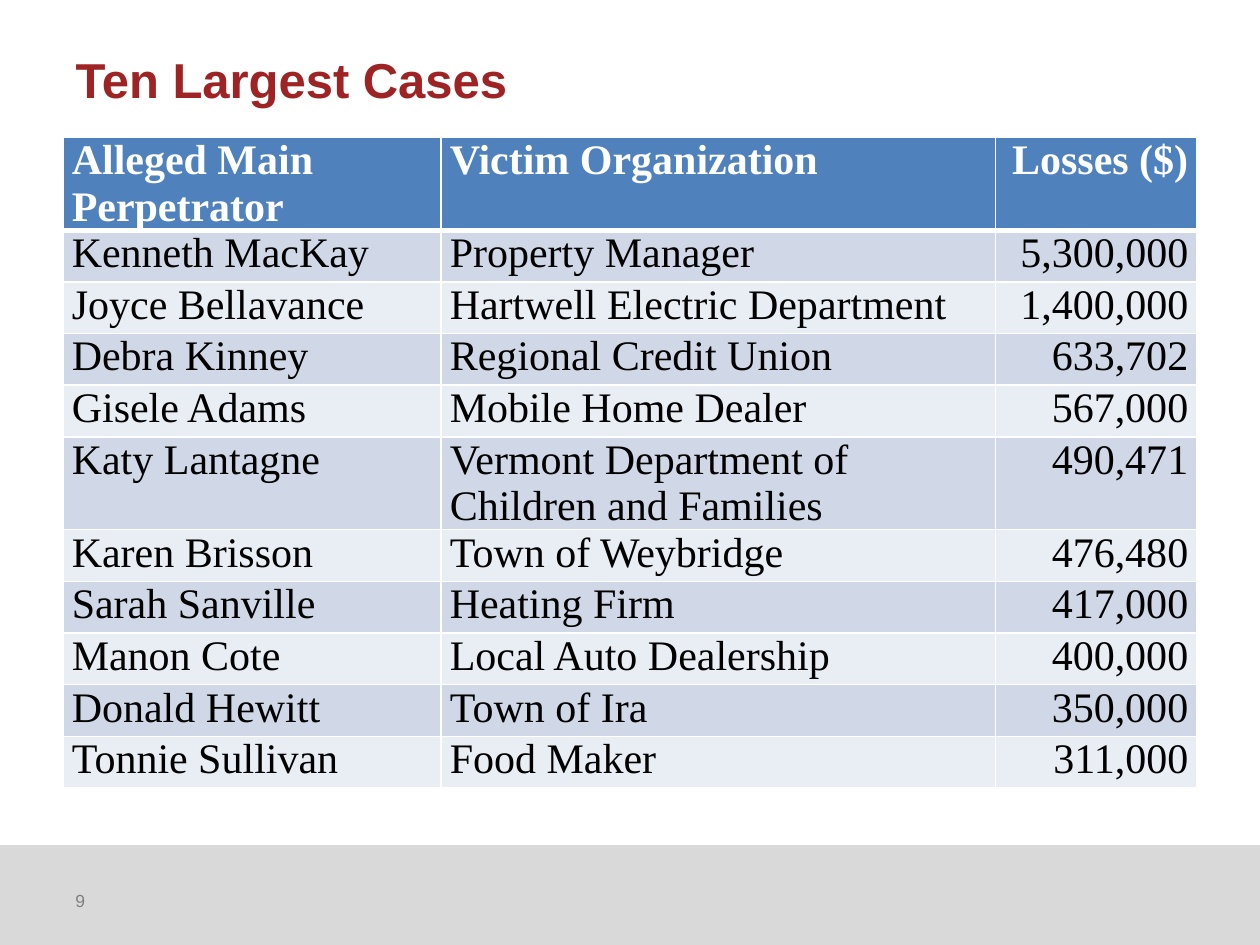
import pptx
import pptx.util
import pptx.dml.color
import pptx.enum.shapes
import pptx.enum.text
import pptx.oxml
import pptx.oxml.ns

Inches, Pt = pptx.util.Inches, pptx.util.Pt
ALIGN, ANCHOR = pptx.enum.text.PP_ALIGN, pptx.enum.text.MSO_ANCHOR

TITLE = "Ten Largest Cases"
PAGE = "9"
HEAD = ("Alleged Main Perpetrator", "Victim Organization", "Losses ($)")
CASES = [
    ("Kenneth MacKay", "Property Manager", "5,300,000"),
    ("Joyce Bellavance", "Hartwell Electric Department", "1,400,000"),
    ("Debra Kinney", "Regional Credit Union", "633,702"),
    ("Gisele Adams", "Mobile Home Dealer", "567,000"),
    ("Katy Lantagne", "Vermont Department of Children and Families", "490,471"),
    ("Karen Brisson", "Town of Weybridge", "476,480"),
    ("Sarah Sanville", "Heating Firm", "417,000"),
    ("Manon Cote", "Local Auto Dealership", "400,000"),
    ("Donald Hewitt", "Town of Ira", "350,000"),
    ("Tonnie Sullivan", "Food Maker", "311,000"),
]
COLORS = {
    "title": "9E2324", "head": "4F81BD", "odd": "D0D8E8", "even": "E9EDF4",
    "bar": "D9D9D9", "page": "808080", "white": "FFFFFF", "black": "000000",
}
WIDE, HIGH = 10, 7.5
EDGE = 0.05 * WIDE
COLS = (3, 4.4, 1.6)
ROW = 0.41
TOP = 1.09
BAR = 6.71


def color(name):
    return pptx.dml.color.RGBColor.from_string(COLORS[name])


def write(frame, text, size, face, tint, bold=False, align=ALIGN.LEFT):
    para = frame.paragraphs[0]
    para.alignment = align
    run = para.add_run()
    run.text = text
    run.font.size = Pt(size)
    run.font.name = face
    run.font.bold = bold
    run.font.color.rgb = color(tint)


def border(cell, side, width):
    line = pptx.oxml.parse_xml(
        f'<a:{side} {pptx.oxml.ns.nsdecls("a")} w="{Pt(width)}"><a:solidFill>'
        f'<a:srgbClr val="{COLORS["white"]}"/></a:solidFill></a:{side}>')
    cell._tc.get_or_add_tcPr().append(line)


def fill_cell(cell, text, row, col):
    head = row == 0
    cell.margin_left = cell.margin_right = Inches(0.07)
    cell.margin_top = cell.margin_bottom = 0
    for side in ("lnL", "lnR", "lnT", "lnB"):
        thick = (head and side == "lnB") or (row == 1 and side == "lnT")
        border(cell, side, 3 if thick else 1)
    cell.fill.solid()
    cell.fill.fore_color.rgb = color("head" if head else "odd" if row % 2 else "even")
    align = ALIGN.RIGHT if col == len(COLS) - 1 else ALIGN.LEFT
    write(cell.text_frame, text, 24, "Times New Roman",
          "white" if head else "black", head, align)


def main():
    deck = pptx.Presentation()
    deck.slide_width, deck.slide_height = Inches(WIDE), Inches(HIGH)
    slide = deck.slides.add_slide(deck.slide_layouts[5])
    shapes = slide.shapes

    bar = shapes.add_shape(pptx.enum.shapes.MSO_SHAPE.RECTANGLE, 0, Inches(BAR),
                           Inches(WIDE), Inches(HIGH - BAR))
    bar.shadow.inherit = False
    bar.fill.solid()
    bar.fill.fore_color.rgb = bar.line.color.rgb = color("bar")
    bar.line.width = Pt(0.75)

    title = shapes.title
    title.left, title.top = Inches(EDGE), 0
    title.width, title.height = Inches(WIDE - 2 * EDGE), Inches(HIGH / 6)
    title.text_frame.vertical_anchor = ANCHOR.MIDDLE
    write(title.text_frame, TITLE, 28, "Arial", "title", True)

    rows = [HEAD] + CASES
    table = shapes.add_table(len(rows), len(COLS), Inches(EDGE), Inches(TOP),
                             Inches(sum(COLS)), Inches(ROW * len(rows))).table
    for col, width in enumerate(COLS):
        table.columns[col].width = Inches(width)
    for row, texts in enumerate(rows):
        table.rows[row].height = Inches(ROW)
        for col, text in enumerate(texts):
            fill_cell(table.cell(row, col), text, row, col)

    page = shapes.add_textbox(Inches(EDGE), Inches(6.95), Inches(2.33), Inches(0.4))
    page.text_frame.word_wrap = True
    page.text_frame.vertical_anchor = ANCHOR.MIDDLE
    write(page.text_frame, PAGE, 10, "Arial", "page")

    deck.save("out.pptx")


if __name__ == "__main__":
    main()
